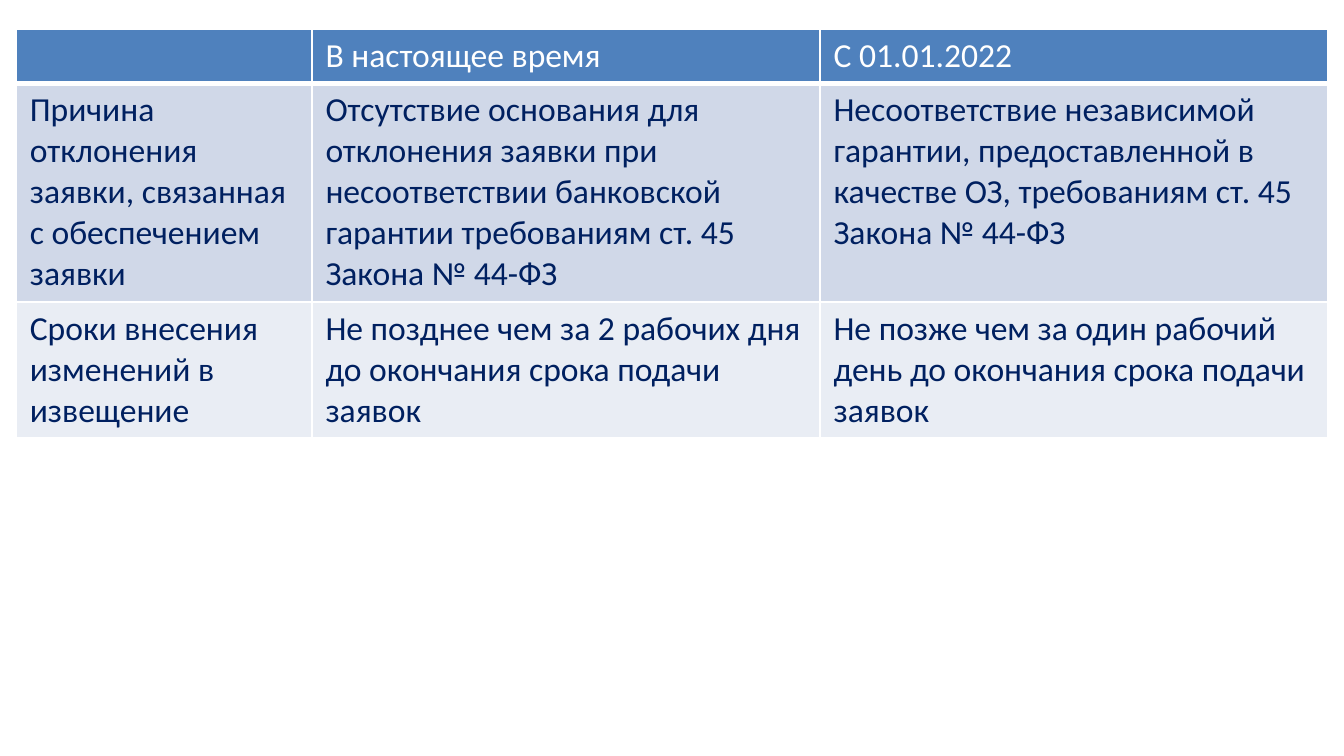
from lxml import etree
from pptx import Presentation
from pptx import util as u
from pptx.dml.color import RGBColor
from pptx.oxml import ns

WHITE = RGBColor(0xFF, 0xFF, 0xFF)
NAVY = RGBColor(0x00, 0x20, 0x60)
HEADER_BLUE = RGBColor(0x4F, 0x81, 0xBD)
BANDS = [RGBColor(0xD0, 0xD8, 0xE8), RGBColor(0xE9, 0xED, 0xF4)]

COLUMNS = [158.4, 272.2, 272.2]
ROW_HEIGHT = 29.2
ROWS = [
    ["", "В настоящее время", "С 01.01.2022"],
    ["Причина отклонения заявки, связанная с обеспечением заявки",
     "Отсутствие основания для отклонения заявки при несоответствии "
     "банковской гарантии требованиям ст. 45 Закона № 44-ФЗ",
     "Несоответствие независимой гарантии, предоставленной в качестве ОЗ, "
     "требованиям ст. 45 Закона № 44-ФЗ"],
    ["Сроки внесения изменений в извещение",
     "Не позднее чем за 2 рабочих дня до окончания срока подачи заявок",
     "Не позже чем за один рабочий день до окончания срока подачи заявок"],
]


class Deck:
    font = {"name": "Calibri", "size": u.Pt(18), "bold": False}

    def __init__(self, width, height):
        self.prs = Presentation()
        self.prs.slide_width, self.prs.slide_height = u.Pt(width), u.Pt(height)
        self.s = self.prs.slides.add_slide(self.prs.slide_layouts[6])

    def border(self, cell, side, width):
        tc_pr = cell._tc.get_or_add_tcPr()
        ln = etree.SubElement(tc_pr, ns.qn("a:ln" + side), w=str(u.Pt(width)))
        fill = etree.SubElement(ln, ns.qn("a:solidFill"))
        etree.SubElement(fill, ns.qn("a:srgbClr"), val=str(WHITE))

    def cell(self, cell, content, fill, color, bottom):
        # Borders come before the fill in the cell properties
        for side, width in {"L": 1, "R": 1, "T": 1, "B": bottom}.items():
            self.border(cell, side, width)
        cell.fill.solid()
        cell.fill.fore_color.rgb = fill
        if content:
            r = cell.text_frame.paragraphs[0].add_run()
            r.text = content
            for name, value in self.font.items():
                setattr(r.font, name, value)
            r.font.color.rgb = color

    def table(self, left, top, height, columns, row_height, rows):
        frame = self.s.shapes.add_table(
            len(rows), len(columns), u.Pt(left), u.Pt(top),
            u.Pt(sum(columns)), u.Pt(height))
        table = frame.table
        table.first_row = table.horz_banding = False
        for column, width in zip(table.columns, columns):
            column.width = u.Pt(width)
        for i, row in enumerate(rows):
            table.rows[i].height = u.Pt(row_height)
            if i == 0:
                style = (HEADER_BLUE, WHITE, 3)
            else:
                style = (BANDS[(i - 1) % 2], NAVY, 1)
            for j, content in enumerate(row):
                self.cell(table.cell(i, j), content, *style)
        # Rows grow with their text, so the frame is taller than their minimum
        frame.height = u.Pt(height)


def main():
    deck = Deck(720, 405)
    # Comparison of the current and the new rules
    deck.table(8.8, 15.4, 216.7, COLUMNS, ROW_HEIGHT, ROWS)
    deck.prs.save("out.pptx")


if __name__ == "__main__":
    main()
